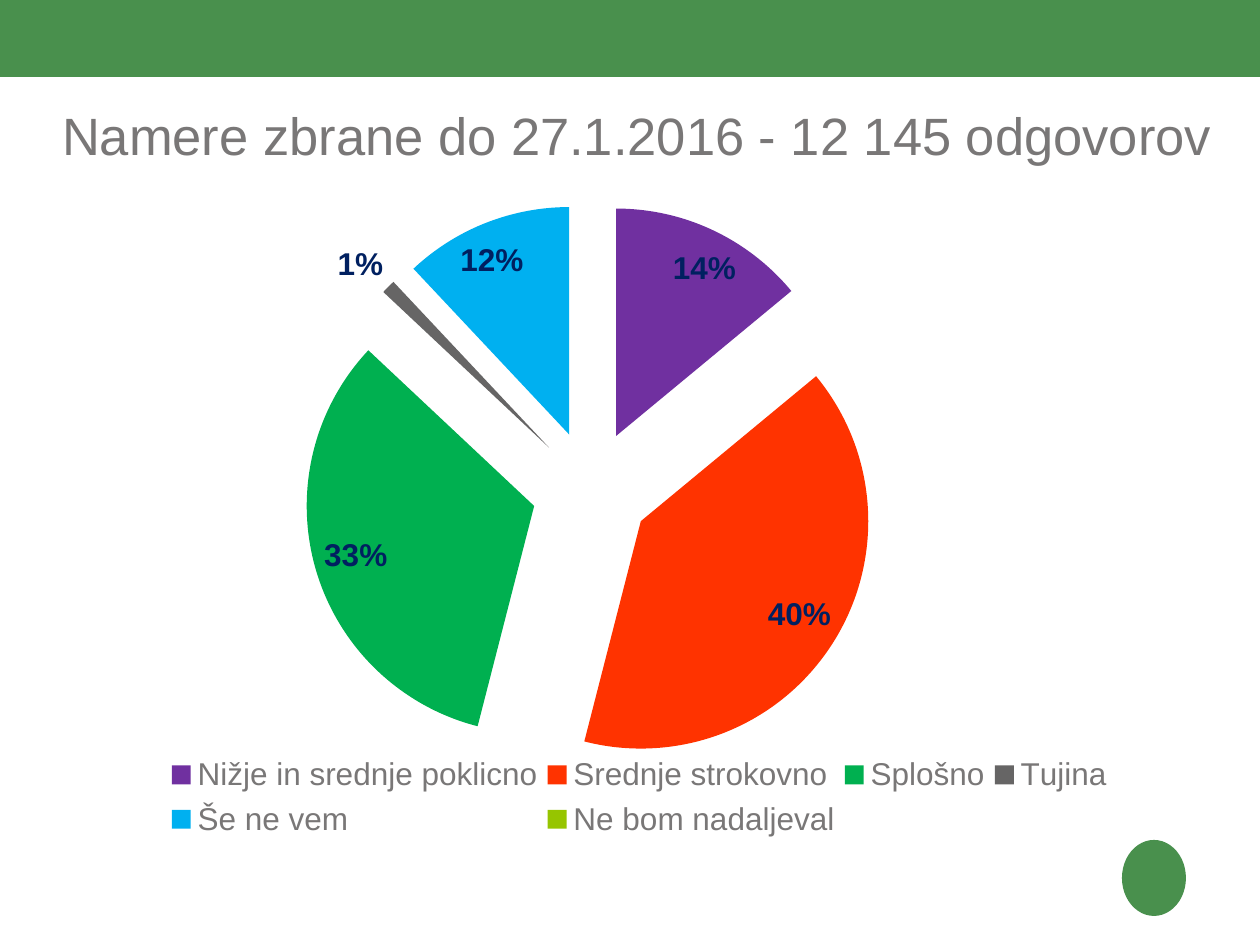
from lxml import etree
from pptx import Presentation
from pptx.chart.data import CategoryChartData as ChartData
from pptx.dml.color import RGBColor
from pptx.enum.chart import XL_CHART_TYPE as Kind, XL_LABEL_POSITION as Spot
from pptx.enum.chart import XL_LEGEND_POSITION as Side
from pptx.enum.shapes import MSO_SHAPE as Shape
from pptx.enum.text import MSO_ANCHOR as Anchor, MSO_AUTO_SIZE as Fit, PP_ALIGN as Align
from pptx.oxml.ns import qn
from pptx.util import Pt

SCALE = 914400 / 126
GREEN, GREY, NAVY = "49904D", "797777", "002060"
SLICES = [
    ("Nižje in srednje poklicno", 14, "7030A0"),
    ("Srednje strokovno", 40, "FF3300"),
    ("Splošno", 33, "00B050"),
    ("Tujina", 1, "666565"),
    ("Še ne vem", 12, "00B0F0"),
    ("Ne bom nadaljeval", 0, "96C500"),
]


def px(*sizes):
    return [round(size * SCALE) for size in sizes]


def color(text):
    return RGBColor.from_string(text)


def style(font, size, tint, bold=False):
    font.name, font.size, font.bold = "Arial", Pt(size), bold
    font.color.rgb = color(tint)


def add_block(slide, kind, box, tint):
    shape = slide.shapes.add_shape(kind, *px(*box))
    shape.shadow.inherit = False
    shape.fill.solid()
    shape.fill.fore_color.rgb = color(tint)
    shape.line.fill.background()


def set_title(slide, text, box):
    title = slide.shapes.title
    title.left, title.top, title.width, title.height = px(*box)
    frame = title.text_frame
    frame.text = text
    frame.word_wrap, frame.auto_size = True, Fit.NONE
    frame.vertical_anchor = Anchor.TOP
    frame.margin_left = frame.margin_right = 0
    frame.margin_top = frame.margin_bottom = 0
    para = frame.paragraphs[0]
    para.alignment = Align.LEFT
    style(para.font, 30, GREY)


def set_layout(part, after, box, inner=False):
    """Place a chart part by fractions of the chart area."""
    for old in part.findall(qn("c:layout")):
        part.remove(old)
    layout = etree.Element(qn("c:layout"))
    manual = etree.SubElement(layout, qn("c:manualLayout"))
    pairs = [("layoutTarget", "inner")] if inner else []
    pairs += [("xMode", "edge"), ("yMode", "edge"), *zip("xywh", box)]
    for tag, value in pairs:
        etree.SubElement(manual, qn("c:" + tag)).set("val", str(value))
    if after is None:
        part.insert(0, layout)
    else:
        after.addnext(layout)


def add_pie(slide, slices, box):
    data = ChartData()
    data.categories = [name for name, _, _ in slices]
    data.add_series("Series 1", [value for _, value, _ in slices])
    chart = slide.shapes.add_chart(Kind.PIE_EXPLODED, *px(*box), data).chart
    chart.has_title = False
    style(chart.font, 10, GREY)

    # Slices
    plot = chart.plots[0]
    plot.vary_by_categories = True
    series = plot.series[0]
    series._element.find(qn("c:explosion")).set("val", "26")
    for i, (_, _, tint) in enumerate(slices):
        form = series.points[i].format
        form.fill.solid()
        form.fill.fore_color.rgb = color(tint)
        form.line.fill.background()
        # A point without its own explosion would sit at the centre
        burst = etree.Element(qn("c:explosion"))
        burst.set("val", "26")
        form._element.find(qn("c:spPr")).addprevious(burst)

    # Labels
    plot.has_data_labels = True
    labels = plot.data_labels
    labels.show_percentage, labels.show_value = True, False
    labels.number_format, labels.number_format_is_linked = "0%", False
    labels.position = Spot.BEST_FIT
    style(labels.font, 18, NAVY, True)

    # Legend and placement
    chart.has_legend = True
    legend = chart.legend
    legend.position = Side.RIGHT
    legend.include_in_layout = False
    style(legend.font, 18, GREY)
    part = legend._element
    set_layout(part, part.find(qn("c:legendPos")), (0.1, 0.82, 0.89, 0.14))
    area = chart._chartSpace.find(".//" + qn("c:plotArea"))
    set_layout(area, None, (0.17, 0.04, 0.66, 0.82), inner=True)


def main():
    deck = Presentation()
    deck.slide_width, deck.slide_height = px(1260, 945)
    slide = deck.slides.add_slide(deck.slide_layouts[5])

    # Top band and emblem
    add_block(slide, Shape.RECTANGLE, (0, -1, 1260, 78), GREEN)
    add_block(slide, Shape.OVAL, (1122, 840, 64, 76), GREEN)

    # Title and chart
    set_title(slide, "Namere zbrane do 27.1.2016 - 12 145 odgovorov", (62, 103, 1167, 89))
    add_pie(slide, SLICES, (54, 175, 1074, 699))
    deck.save("out.pptx")


if __name__ == "__main__":
    main()
